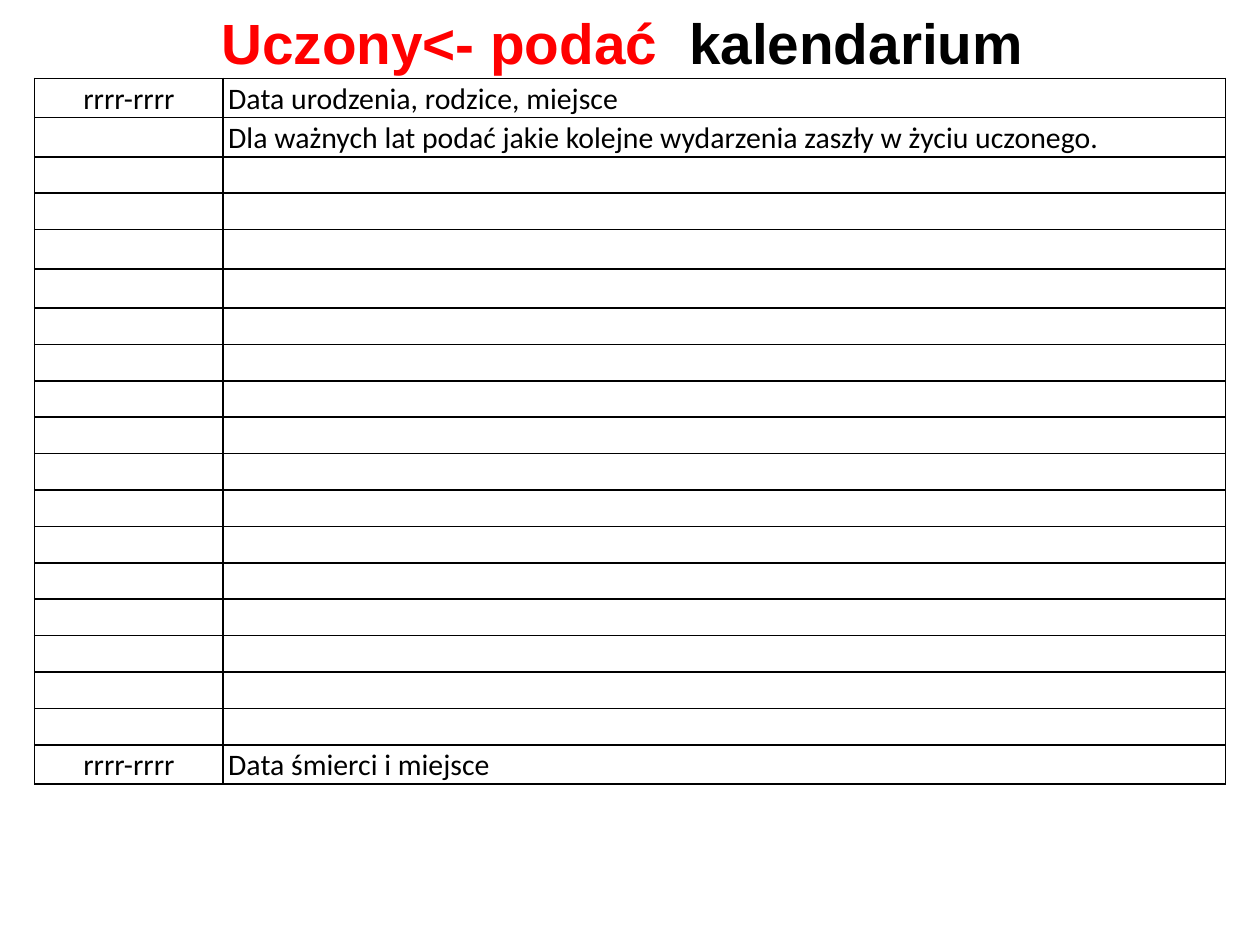
from lxml.etree import SubElement
from pptx import Presentation
from pptx.dml.color import RGBColor
from pptx.enum.text import MSO_ANCHOR as Anchor, MSO_AUTO_SIZE as AutoSize, PP_ALIGN as Align
from pptx.oxml.ns import qn
from pptx.util import Cm, Pt

BLACK, RED = "000000", "FF0000"
TITLE = [("Uczony<- podać  ", RED), ("kalendarium ", BLACK)]
ROW_COUNT = 19
ENTRIES = {
    0: ("rrrr-rrrr", "Data urodzenia, rodzice, miejsce"),
    1: ("", "Dla ważnych lat podać jakie kolejne wydarzenia zaszły w życiu uczonego."),
    ROW_COUNT - 1: ("rrrr-rrrr", "Data śmierci i miejsce"),
}
TALL_ROWS = {0, 1, 4, 5, ROW_COUNT - 1}
TALL, LOW = 0.79, 0.73
TEXT_SIZE = 17


def colour(value):
    """Turn a hex string into a colour."""
    return RGBColor.from_string(value)


def style_font(font, name, size, value, bold=False):
    """Set the face, size, colour and weight of a font."""
    font.name, font.size, font.bold = name, Pt(size), bold
    font.color.rgb = colour(value)


def add_title(page, left, top, width, height):
    """Place the two-coloured title in its placeholder."""
    box = page.shapes.title
    box.left, box.top, box.width, box.height = map(Cm, (left, top, width, height))
    frame = box.text_frame
    frame.auto_size = AutoSize.NONE
    frame.vertical_anchor = Anchor.MIDDLE
    para = frame.paragraphs[0]
    para.alignment = Align.CENTER
    for text, value in TITLE:
        span = para.add_run()
        span.text = text
        style_font(span.font, "Arial", 32.4, value, bold=True)


def add_borders(cell, value, width):
    """Draw a solid line on all four sides of a cell."""
    properties = cell._tc.get_or_add_tcPr()
    for side in ("lnL", "lnR", "lnT", "lnB"):
        line = SubElement(properties, qn(f"a:{side}"), w=str(Pt(width)))
        fill = SubElement(line, qn("a:solidFill"))
        SubElement(fill, qn("a:srgbClr"), val=value)


def fill_cell(cell, text, alignment):
    """Write and format one table cell."""
    add_borders(cell, BLACK, 1)
    cell.fill.background()
    cell.vertical_anchor = Anchor.MIDDLE
    cell.margin_left = cell.margin_right = Cm(0.1)
    cell.margin_top = cell.margin_bottom = 0
    para = cell.text_frame.paragraphs[0]
    para.alignment = alignment
    if text:
        para.text = text
        para.line_spacing = 1.07
        style_font(para.runs[0].font, "Calibri", TEXT_SIZE, BLACK)
    else:
        SubElement(para._p, qn("a:endParaRPr"), sz=str(TEXT_SIZE * 100))


def add_calendar(page, left, top, width, date_width):
    """Place the table of dates and events."""
    heights = [Cm(TALL if row in TALL_ROWS else LOW) for row in range(ROW_COUNT)]
    frame = page.shapes.add_table(ROW_COUNT, 2, Cm(left), Cm(top), Cm(width), sum(heights))
    table = frame.table
    table.first_row = table.horz_banding = False
    table.columns[0].width = Cm(date_width)
    table.columns[1].width = Cm(width - date_width)
    for index, height in enumerate(heights):
        table.rows[index].height = height
        date, event = ENTRIES.get(index, ("", ""))
        fill_cell(table.cell(index, 0), date, Align.CENTER)
        fill_cell(table.cell(index, 1), event, Align.LEFT)


def main():
    """Build the calendar slide and save it."""
    deck = Presentation()
    deck.slide_width, deck.slide_height = Cm(25.4), Cm(19.05)
    page = deck.slides.add_slide(deck.slide_layouts[5])
    add_title(page, 0, 0, 25.4, 1.7)
    add_calendar(page, 0.7, 1.58, 24, 3.8)
    deck.save("out.pptx")


if __name__ == "__main__":
    main()
